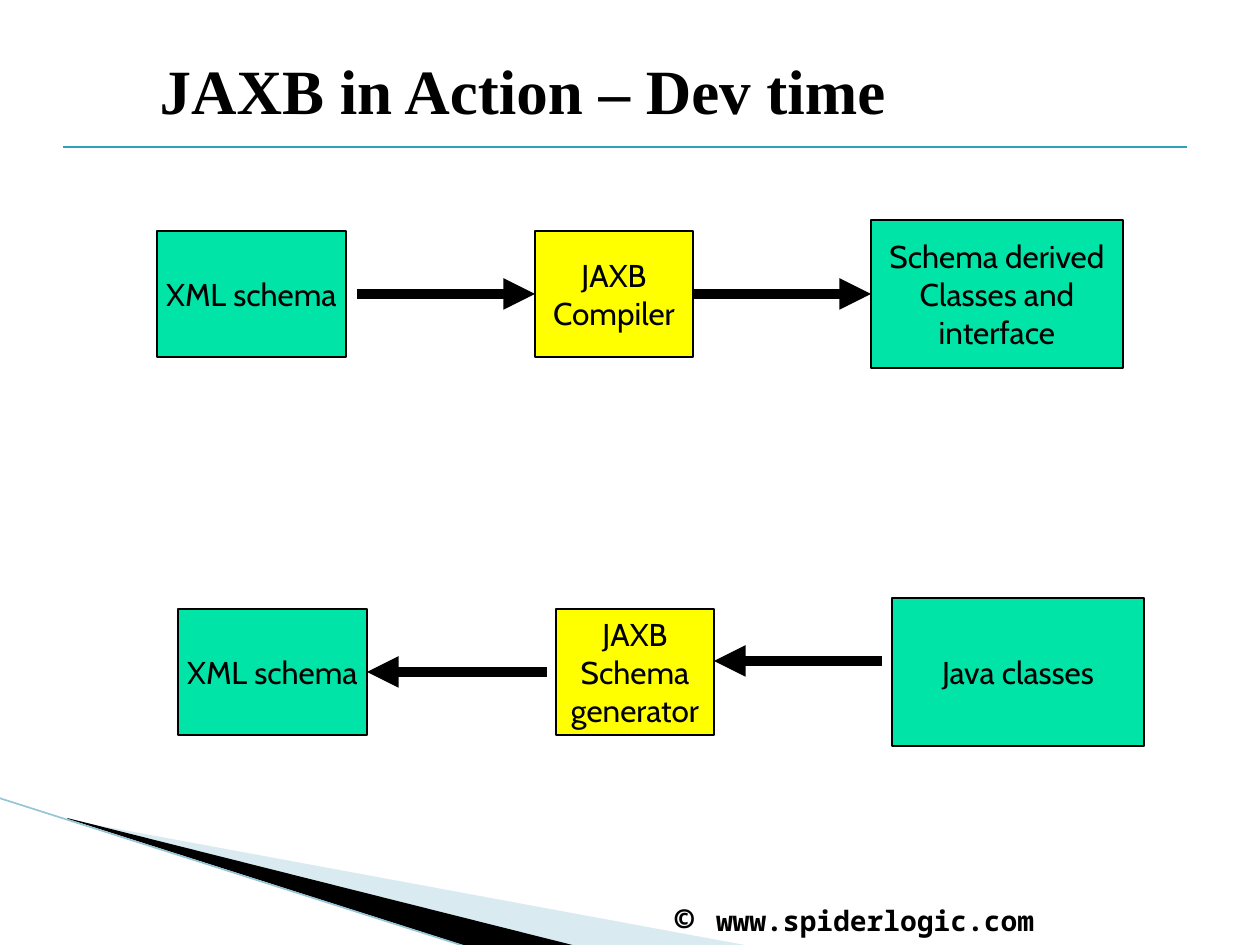
import pptx
import pptx.dml.color
import pptx.enum.shapes
import pptx.enum.text
import pptx.oxml
import pptx.oxml.ns
import pptx.util

RGBColor = pptx.dml.color.RGBColor
Align = pptx.enum.text.PP_ALIGN
Anchor = pptx.enum.text.MSO_ANCHOR

BLACK = RGBColor(0x00, 0x00, 0x00)
GREEN = RGBColor(0x00, 0xE4, 0xA8)
YELLOW = RGBColor(0xFF, 0xFF, 0x00)
TEAL = RGBColor(0x2D, 0xA2, 0xBF)
PALE_BLUE = RGBColor(0xA0, 0xCB, 0xDC)
EDGE_BLUE = RGBColor(0x97, 0xC5, 0xD8)

EMU_PER_PX = 914400 / 126
LEFT, RIGHT = 1, 3


def px(length):
    return pptx.util.Emu(round(length * EMU_PER_PX))


def add_element(parent, tag, **attributes):
    child = pptx.oxml.parse_xml(f"<{tag} {pptx.oxml.ns.nsdecls('a')}/>")
    for name, value in attributes.items():
        child.set(name, value)
    parent.append(child)


class SlideBuilder:
    title_font = "Times New Roman"
    label_font = "Cabin"
    footer_font = "Noto Sans Mono"

    def __init__(self, page):
        self.page = page

    def set_font(self, font, name, size, bold=False):
        font.name = name
        font.size = pptx.util.Pt(size)
        font.bold = bold
        font.color.rgb = BLACK

    def title(self, text, left, top, width, height):
        box = self.page.shapes.title
        box.left, box.top, box.width, box.height = map(px, (left, top, width, height))
        box.text_frame.text = text
        box.text_frame.vertical_anchor = Anchor.MIDDLE
        para = box.text_frame.paragraphs[0]
        para.alignment = Align.LEFT
        self.set_font(para.font, self.title_font, 36, True)

    def footer(self, pieces, left, top, width, height):
        box = self.page.shapes.add_textbox(*map(px, (left, top, width, height)))
        frame = box.text_frame
        frame.word_wrap = True
        frame.vertical_anchor = Anchor.BOTTOM
        frame.margin_left = px(34)
        for text, size in pieces:
            span = frame.paragraphs[0].add_run()
            span.text = text
            self.set_font(span.font, self.footer_font, size, True)

    def box(self, lines, fill, left, top, width, height):
        box = self.page.shapes.add_shape(
            pptx.enum.shapes.MSO_SHAPE.RECTANGLE, *map(px, (left, top, width, height)))
        box.shadow.inherit = False
        box.fill.solid()
        box.fill.fore_color.rgb = fill
        box.line.color.rgb = BLACK
        box.line.width = pptx.util.Pt(1)
        frame = box.text_frame
        frame.word_wrap = False
        frame.vertical_anchor = Anchor.MIDDLE
        frame.text = "\n".join(lines)
        for para in frame.paragraphs:
            para.alignment = Align.CENTER
            self.set_font(para.font, self.label_font, 18)
        return box

    def line(self, start, end, color, width):
        line = self.page.shapes.add_connector(
            pptx.enum.shapes.MSO_CONNECTOR.STRAIGHT, *map(px, start + end))
        line.line.color.rgb = color
        line.line.width = pptx.util.Pt(width)
        add_element(line.element.spPr, "a:effectLst")
        return line

    def arrow(self, start, end, source=None, target=None):
        arrow = self.line(start, end, BLACK, 6)
        add_element(arrow.line._get_or_add_ln(), "a:tailEnd", type="triangle")
        if source:
            arrow.begin_connect(*source)
        if target:
            arrow.end_connect(*target)

    def wedge(self, points, fill, opacity=100):
        builder = self.page.shapes.build_freeform(*points[0], scale=EMU_PER_PX)
        builder.add_line_segments(points[1:], close=True)
        wedge = builder.convert_to_shape()
        wedge.shadow.inherit = False
        wedge.line.fill.background()
        wedge.fill.solid()
        wedge.fill.fore_color.rgb = fill
        if opacity < 100:
            color = wedge.element.spPr.find(".//" + pptx.oxml.ns.qn("a:srgbClr"))
            add_element(color, "a:alpha", val=str(opacity * 1000))


def main():
    deck = pptx.Presentation()
    deck.slide_width, deck.slide_height = px(1260), px(945)
    slide = SlideBuilder(deck.slides.add_slide(deck.slide_layouts[5]))

    slide.wedge([(69, 820), (750, 946), (575, 946), (69, 819)], PALE_BLUE, 40)
    slide.wedge([(67, 818), (576, 946), (469, 947), (68, 819)], BLACK)
    slide.line((-1, 798), (467, 947), EDGE_BLUE, 0.95)
    slide.footer([("© ", 20), ("www.spiderlogic.com", 16)], 640, 872, 451, 73)

    slide.title("JAXB in Action – Dev time", 147, 42, 1050, 94)
    slide.line((63, 147), (1187, 147), TEAL, 1)

    schema = slide.box(["XML schema"], GREEN, 157, 231, 189, 126)
    compiler = slide.box(["JAXB", "Compiler"], YELLOW, 535, 231, 158, 126)
    derived = slide.box(["Schema derived", "Classes and", "interface"],
                        GREEN, 871, 220, 252, 148)
    slide.arrow((357, 294), (535, 294), target=(compiler, LEFT))
    slide.arrow((693, 294), (871, 294), (compiler, RIGHT), (derived, LEFT))

    schema = slide.box(["XML schema"], GREEN, 178, 609, 189, 126)
    slide.box(["JAXB", "Schema", "generator"], YELLOW, 556, 609, 158, 126)
    slide.box(["Java classes"], GREEN, 892, 598, 252, 148)
    slide.arrow((882, 661), (714, 661))
    slide.arrow((547, 672), (367, 672), target=(schema, RIGHT))

    deck.save("out.pptx")


if __name__ == "__main__":
    main()
